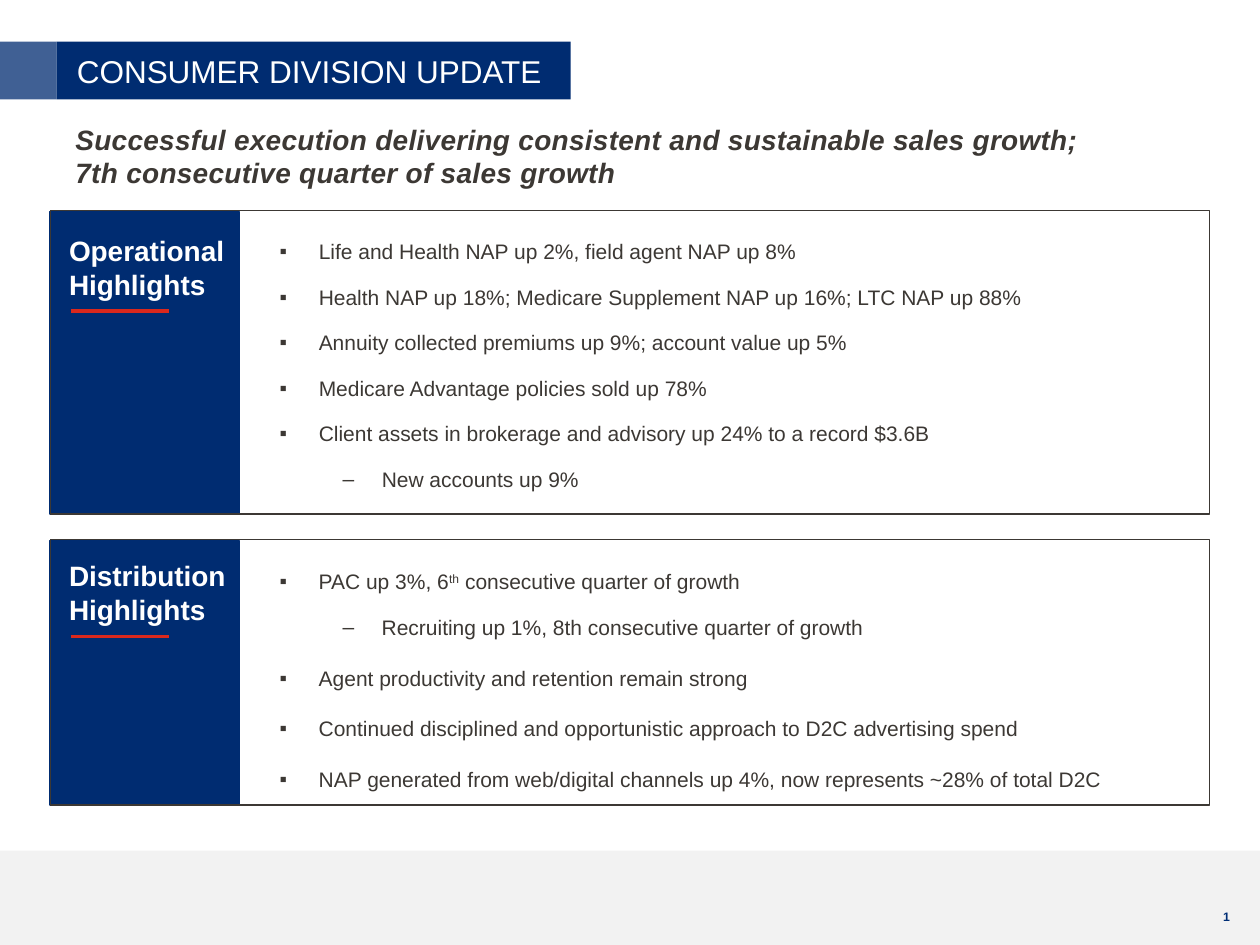
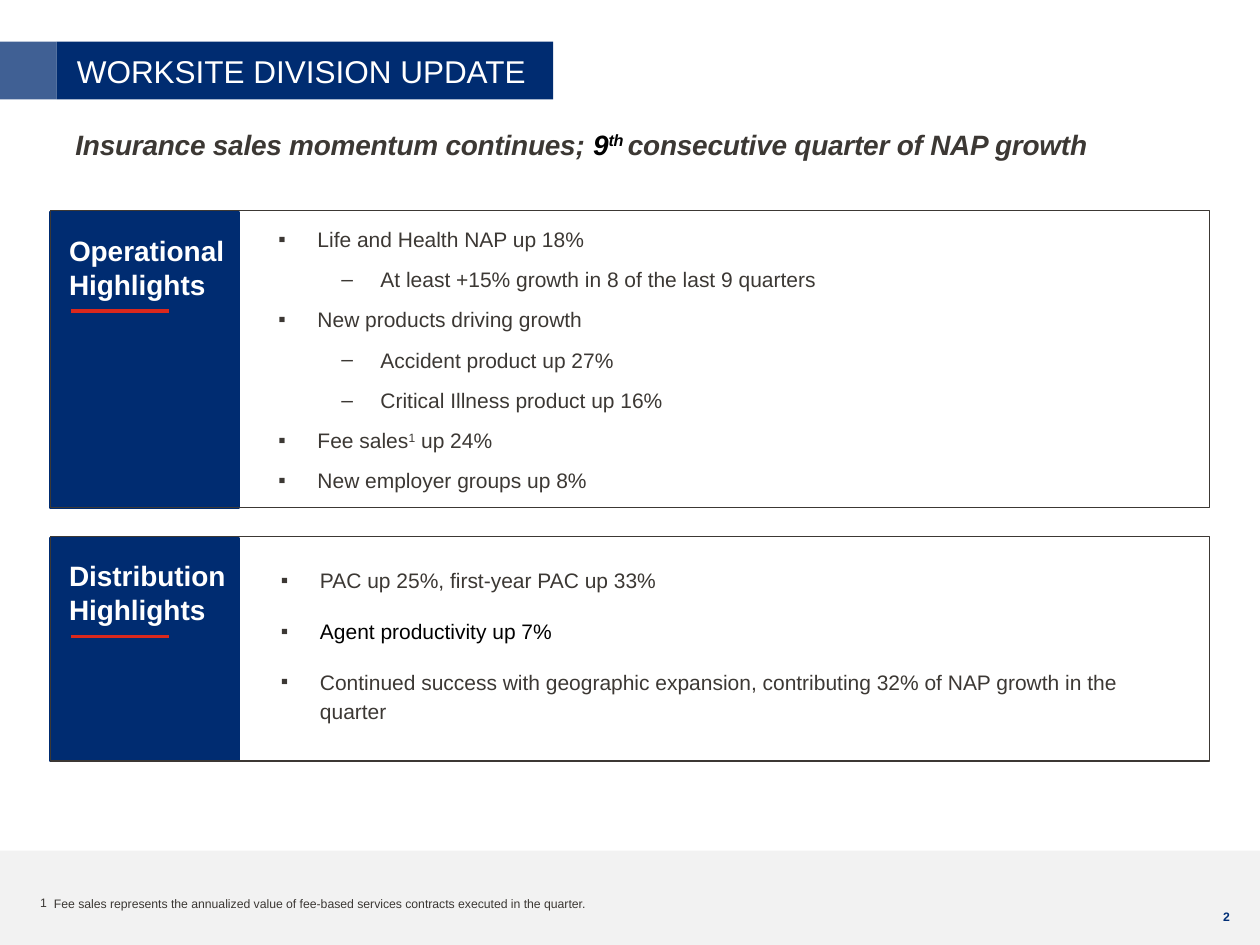
"""Build the two division update slides."""
from pptx import Presentation
from pptx.dml.color import RGBColor
from pptx.enum.shapes import MSO_CONNECTOR, MSO_SHAPE
from pptx.enum.text import MSO_ANCHOR, MSO_AUTO_SIZE, PP_ALIGN
from pptx.oxml.ns import qn
from pptx.util import Inches, Pt
from lxml.etree import SubElement

NAVY, DARK, RED = "002C71", "3C3834", "DA281C"
WHITE, BLACK, GREY, NUMBER = "FFFFFF", "000000", "F2F2F2", "002E76"
SUP = {"baseline": 30000}


def rgb(value):
    return RGBColor.from_string(value)


def box(*lengths):
    return [Inches(n) for n in lengths]


class Deck:
    font = "Arial"
    heading = {"size": Pt(16), "bold": True}
    lead = {**heading, "italic": True}
    body = {"size": Pt(12)}
    note = {"size": Pt(7)}

    def __init__(self):
        self.prs = Presentation()
        self.prs.slide_width, self.prs.slide_height = box(10, 7.5)
        self.s = None

    def new_slide(self, title, width):
        self.s = self.prs.slides.add_slide(self.prs.slide_layouts[5])
        self.rect((0, 6.75, 10, 0.75), GREY)
        self.page_number()
        self.rect((0, 0.33, 0.45, 0.46), NAVY, alpha=75)
        sp = self.s.shapes.title
        sp.left, sp.top, sp.width, sp.height = box(0.45, 0.33, width, 0.46)
        sp.fill.solid()
        sp.fill.fore_color.rgb = rgb(NAVY)
        tf = sp.text_frame
        self.frame(tf, margin_left=Inches(0.16), margin_right=0,
                   vertical_anchor=MSO_ANCHOR.MIDDLE)
        p = tf.paragraphs[0]
        p.alignment = PP_ALIGN.LEFT
        self.runs(p, title, WHITE, {"size": Pt(18)})

    def frame(self, tf, **values):
        values = {"word_wrap": True, "auto_size": MSO_AUTO_SIZE.NONE, **values}
        for name, value in values.items():
            setattr(tf, name, value)

    def style(self, font, color, fmt):
        for name, value in {"name": self.font, **fmt}.items():
            setattr(font, name, value)
        font.color.rgb = rgb(color)

    def runs(self, p, content, color, fmt, **attrs):
        parts = [(content, {})] if isinstance(content, str) else content
        for text, extra in parts:
            r = p.add_run()
            r.text = text
            extra = {**attrs, **extra}
            self.style(r.font, extra.pop("color", color), fmt)
            for name, value in extra.items():
                r.font._element.set(name, str(value))

    def rect(self, at, fill=None, line=None, weight=1, alpha=None):
        sp = self.s.shapes.add_shape(MSO_SHAPE.RECTANGLE, *box(*at))
        sp.shadow.inherit = False
        if fill:
            sp.fill.solid()
            sp.fill.fore_color.rgb = rgb(fill)
        else:
            sp.fill.background()
        if line:
            sp.line.color.rgb = rgb(line)
            sp.line.width = Pt(weight)
        else:
            sp.line.fill.background()
        if alpha:
            clr = sp.fill._xPr.find(".//" + qn("a:srgbClr"))
            SubElement(clr, qn("a:alpha"), val=str(alpha * 1000))

    def rule(self, x1, x2, y):
        c = self.s.shapes.add_connector(MSO_CONNECTOR.STRAIGHT, *box(x1, y, x2, y))
        c.line.color.rgb = rgb(RED)
        c.line.width = Pt(2)
        SubElement(c._element.spPr, qn("a:effectLst"))

    def text(self, at, paragraphs, color, fmt, frame=None, **attrs):
        tf = self.s.shapes.add_textbox(*box(*at)).text_frame
        self.frame(tf, **(frame or {}))
        for i, content in enumerate(paragraphs):
            p = tf.add_paragraph() if i else tf.paragraphs[0]
            self.runs(p, content, color, fmt, **attrs)
        return tf

    def bullet(self, p, char, left, hang):
        pPr = p._p.get_or_add_pPr()
        pPr.set("marL", str(Inches(left)))
        pPr.set("indent", str(-Inches(hang)))
        clr = SubElement(pPr, qn("a:buClr"))
        SubElement(clr, qn("a:srgbClr"), val=DARK)
        SubElement(pPr, qn("a:buFont"), typeface=self.font)
        SubElement(pPr, qn("a:buChar"), char=char)

    def bullets(self, at, items, gap, sub_gap):
        margins = {"margin_left": 0, "margin_right": 0, "margin_bottom": 0}
        tf = self.text(at, [content for _, content in items], DARK, self.body, margins)
        for i, (p, (level, _)) in enumerate(zip(tf.paragraphs, items)):
            p.level = level
            self.bullet(p, "▪–"[level], 0.61 + 0.5 * level, 0.31)
            p.line_spacing = Pt(17)
            if i:
                p.space_before = Pt(sub_gap if level else gap)

    def panel(self, top, height, heading, heading_top):
        self.rect((0.4, top + 0.01, 1.5, height - 0.01), NAVY, NAVY)
        self.rect((0.4, top, 9.2, height), line=DARK, weight=0.75)
        self.text((0.45, heading_top, 1.5, 0.64), [heading], WHITE, self.heading,
                  {"vertical_anchor": MSO_ANCHOR.MIDDLE})
        self.rule(0.56, 1.34, heading_top + 0.67)

    def footnote(self, mark, content):
        tf = self.text((0.22, 6.97, 7.17, 0.31), [content], DARK, self.note,
                       {"vertical_anchor": MSO_ANCHOR.BOTTOM})
        p = tf.paragraphs[0]
        self.bullet(p, mark, 0.11, 0.11)
        p.space_after = Pt(3)

    def page_number(self):
        number = str(len(self.prs.slides) + 5)
        tf = self.text((9.61, 7.17, 0.41, 0.22), [number], NUMBER,
                       {**self.note, "bold": True})
        r = tf.paragraphs[0].runs[0]._r
        fld = SubElement(tf.paragraphs[0]._p, qn("a:fld"), type="slidenum",
                         id="{B6F15528-21DE-4FAA-801E-634DDDAF4B2B}")
        fld.extend(list(r))
        tf.paragraphs[0]._p.remove(r)


def consumer(deck):
    deck.new_slide("CONSUMER DIVISION UPDATE", 4.08)
    deck.text((0.5, 0.92, 9.58, 0.72), [
        "Successful execution delivering consistent and sustainable sales growth;",
        "7th consecutive quarter of sales growth",
    ], DARK, deck.lead, spc=20)
    deck.panel(1.67, 2.41, "Operational Highlights", 1.8)
    deck.bullets((1.92, 1.81, 7.45, 2.18), [
        (0, "Life and Health NAP up 2%, field agent NAP up 8%"),
        (0, "Health NAP up 18%; Medicare Supplement NAP up 16%; LTC NAP up 88%"),
        (0, "Annuity collected premiums up 9%; account value up 5%"),
        (0, "Medicare Advantage policies sold up 78%"),
        (0, "Client assets in brokerage and advisory up 24% to a record $3.6B"),
        (1, "New accounts up 9%"),
    ], 9, 9)
    deck.panel(4.28, 2.11, "Distribution Highlights", 4.38)
    deck.bullets((1.92, 4.43, 7.63, 1.83), [
        (0, [("PAC up 3%, 6", {}), ("th", SUP), (" consecutive quarter of growth", {})]),
        (1, "Recruiting up 1%, 8th consecutive quarter of growth"),
        (0, "Agent productivity and retention remain strong"),
        (0, "Continued disciplined and opportunistic approach to D2C advertising spend"),
        (0, "NAP generated from web/digital channels up 4%, now represents ~28% of total D2C"),
    ], 12, 9)


def worksite(deck):
    deck.new_slide("WORKSITE DIVISION UPDATE", 3.94)
    black = {"color": BLACK}
    tf = deck.text((0.5, 0.95, 9.58, 0.34), [[
        ("Insurance sales momentum continues; ", {}),
        ("9", black),
        ("th ", {**black, **SUP}),
        ("consecutive quarter of NAP growth", {}),
    ]], DARK, deck.lead, spc=-10)
    tf.paragraphs[0].line_spacing = Pt(20)
    deck.panel(1.67, 2.36, "Operational Highlights", 1.8)
    deck.bullets((1.91, 1.71, 7.31, 2.25), [
        (0, "Life and Health NAP up 18%"),
        (1, "At least +15% growth in 8 of the last 9 quarters"),
        (0, "New products driving growth"),
        (1, "Accident product up 27%"),
        (1, "Critical Illness product up 16%"),
        (0, [("Fee sales", {}), ("1", SUP), (" up 24%", {})]),
        (0, "New employer groups up 8%"),
    ], 6, 6)
    deck.panel(4.26, 1.78, "Distribution Highlights", 4.38)
    deck.bullets((1.93, 4.42, 7.44, 1.64), [
        (0, "PAC up 25%, first-year PAC up 33%"),
        (0, [("Agent productivity up 7%", black)]),
        (0, "Continued success with geographic expansion, contributing 32% of NAP "
            "growth in the quarter"),
    ], 12, 12)
    deck.footnote("1", "Fee sales represents the annualized value of fee-based services "
                       "contracts executed in the quarter.")


def main():
    deck = Deck()
    consumer(deck)
    worksite(deck)
    deck.prs.save("out.pptx")


if __name__ == "__main__":
    main()
